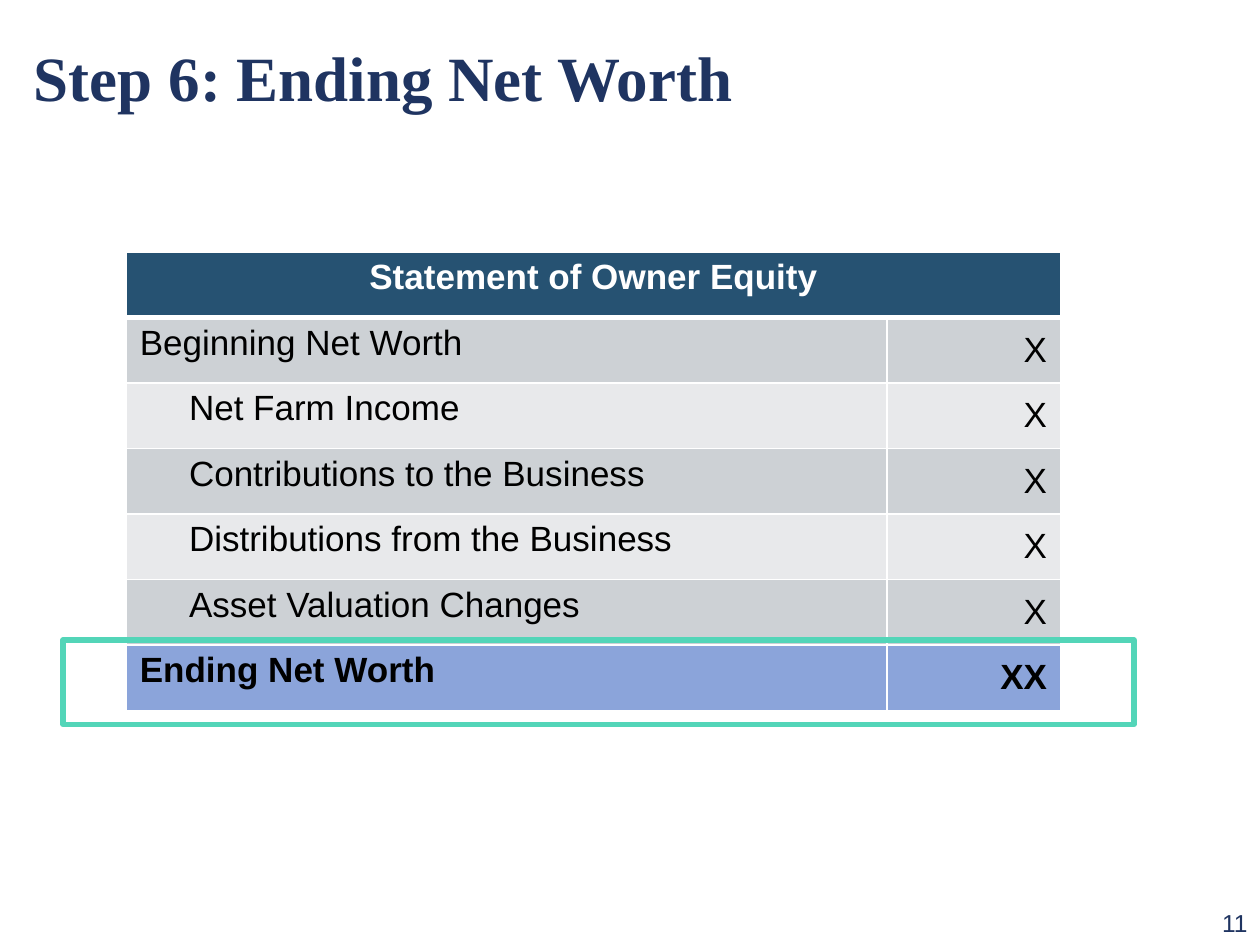
from lxml.etree import SubElement
from pptx import Presentation
from pptx.dml.color import RGBColor
from pptx.enum.shapes import MSO_SHAPE as Shape
from pptx.enum.text import MSO_ANCHOR as Anchor, PP_ALIGN as Align
from pptx.oxml.ns import qn
from pptx.util import Inches, Pt

COLORS = {
    "navy": "1F3461",
    "white": "FFFFFF",
    "black": "000000",
    "header": "265272",
    "dark_band": "CDD1D5",
    "light_band": "E8E9EB",
    "total": "8BA4DA",
    "highlight": "53D5B8",
}
ROW_HEIGHT = 0.52
INDENT = 0.39

# Label, value, indented
EQUITY_ROWS = [
    ("Beginning Net Worth", "X", False),
    ("Net Farm Income", "X", True),
    ("Contributions to the Business", "X", True),
    ("Distributions from the Business", "X", True),
    ("Asset Valuation Changes", "X", True),
    ("Ending Net Worth", "XX", False),
]


def color(name):
    return RGBColor.from_string(COLORS[name])


def write(frame, text, size, fill, align=Align.LEFT, bold=False, font="Arial"):
    para = frame.paragraphs[0]
    para.alignment = align
    span = para.add_run()
    span.text = text
    span.font.name = font
    span.font.size = Pt(size)
    span.font.bold = bold
    span.font.color.rgb = color(fill)
    return para


def add_text(page, left, top, width, height, anchor, *args, **style):
    box = page.shapes.add_textbox(Inches(left), Inches(top), Inches(width), Inches(height))
    box.text_frame.word_wrap = True
    box.text_frame.vertical_anchor = anchor
    write(box.text_frame, *args, **style)


def style_cell(cell, fill, top=1, bottom=1):
    """White borders first, then the fill, as the cell schema orders them."""
    properties = cell._tc.get_or_add_tcPr()
    for side, width in (("L", 1), ("R", 1), ("T", top), ("B", bottom)):
        line = SubElement(properties, qn(f"a:ln{side}"), w=str(Pt(width)))
        solid = SubElement(line, qn("a:solidFill"))
        SubElement(solid, qn("a:srgbClr"), val=COLORS["white"])
    cell.fill.solid()
    cell.fill.fore_color.rgb = color(fill)
    cell.margin_left = cell.margin_right = Inches(0.11)
    cell.margin_top = cell.margin_bottom = Inches(0.05)


def add_equity_table(page):
    count = len(EQUITY_ROWS) + 1
    table = page.shapes.add_table(
        count, 2, Inches(1), Inches(2), Inches(7.42), Inches(ROW_HEIGHT * count)
    ).table
    table.columns[0].width = Inches(6.04)
    table.columns[1].width = Inches(1.38)
    for row in table.rows:
        row.height = Inches(ROW_HEIGHT)

    # Header across both columns
    header = table.cell(0, 0)
    header.merge(table.cell(0, 1))
    for column in range(2):
        style_cell(table.cell(0, column), "header", bottom=3)
    write(header.text_frame, "Statement of Owner Equity", 20, "white", Align.CENTER, True)

    # Banded rows, closing with the total
    for index, (label, value, indented) in enumerate(EQUITY_ROWS, start=1):
        is_total = index == len(EQUITY_ROWS)
        fill = "total" if is_total else "dark_band" if index % 2 else "light_band"
        label_cell, value_cell = table.cell(index, 0), table.cell(index, 1)
        for cell in (label_cell, value_cell):
            style_cell(cell, fill, top=3 if index == 1 else 1)
        para = write(label_cell.text_frame, label, 20, "black", bold=is_total)
        if indented:
            para._p.get_or_add_pPr().set("marL", str(Inches(INDENT)))
        value_cell.vertical_anchor = Anchor.MIDDLE
        write(value_cell.text_frame, value, 20, "black", Align.RIGHT, is_total)


def add_highlight(page, left, top, width, height):
    frame = page.shapes.add_shape(
        Shape.RECTANGLE, Inches(left), Inches(top), Inches(width), Inches(height)
    )
    frame.shadow.inherit = False
    frame.fill.background()
    frame.line.color.rgb = color("highlight")
    frame.line.width = Pt(3)
    SubElement(frame.line._get_or_add_ln(), qn("a:round"))


def main():
    deck = Presentation()
    deck.slide_width, deck.slide_height = Inches(10), Inches(7.5)
    page = deck.slides.add_slide(deck.slide_layouts[6])

    # Page number and title
    add_text(page, 9.42, 7.16, 0.58, 0.34, Anchor.TOP, "11", 14, "navy", Align.RIGHT)
    add_text(page, 0.17, 0.17, 8.75, 0.87, Anchor.MIDDLE, "Step 6: Ending Net Worth",
             36, "navy", bold=True, font="Times New Roman")

    # Statement with the closing row framed
    add_equity_table(page)
    add_highlight(page, 0.5, 5.08, 8.5, 0.67)

    deck.save("out.pptx")


if __name__ == "__main__":
    main()
